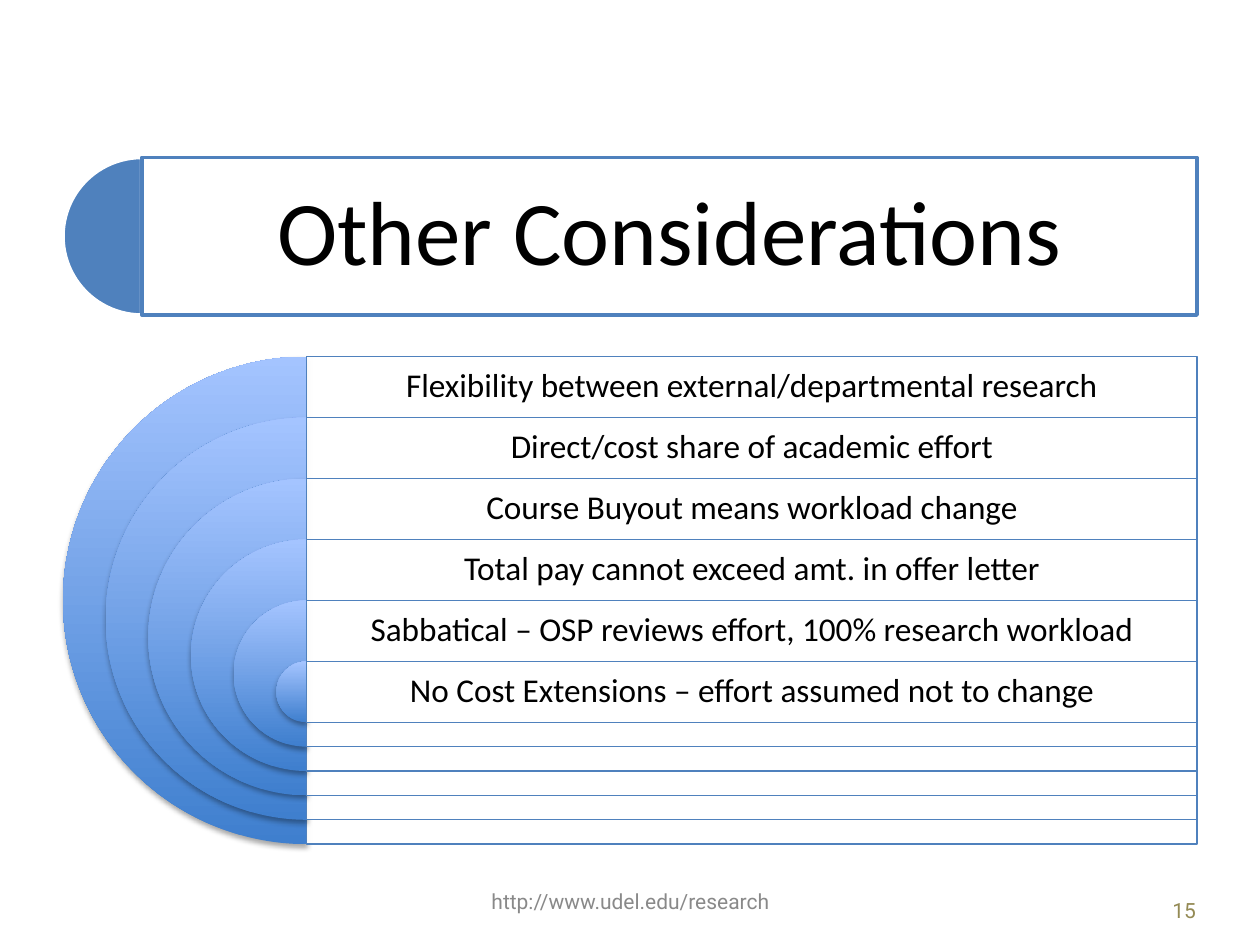
from dataclasses import dataclass

from lxml import etree
from pptx import Presentation
from pptx.dml.color import RGBColor
from pptx.enum.shapes import MSO_SHAPE
from pptx.enum.text import MSO_ANCHOR, PP_ALIGN
from pptx.oxml.ns import qn
from pptx.util import Inches, Pt

PIE, RECT = MSO_SHAPE.PIE, MSO_SHAPE.RECTANGLE
MIDDLE = MSO_ANCHOR.MIDDLE
CENTER, RIGHT = PP_ALIGN.CENTER, PP_ALIGN.RIGHT


@dataclass(frozen=True)
class Theme:
    accent: str = "4F81BD"
    grad_dark: str = "3F7FCE"
    grad_light: str = "A4C4FF"
    white: str = "FFFFFF"
    text: str = "000000"
    footer: str = "898989"
    number: str = "948A54"
    body_font: str = "Calibri"
    footer_font: str = "Roboto"
    title_size: int = 52
    row_size: int = 19
    footer_size: int = 12


THEME = Theme()
TITLE = "Other Considerations"
ROWS = [
    "Flexibility between external/departmental research",
    "Direct/cost share of academic effort",
    "Course Buyout means workload change",
    "Total pay cannot exceed amt. in offer letter",
    "Sabbatical – OSP reviews effort, 100% research workload",
    "No Cost Extensions – effort assumed not to change",
]


def rgb(value):
    return RGBColor.from_string(value)


def write(sp, text, size, color, font, align=CENTER, inset=None, spacing=None):
    tf = sp.text_frame
    tf.word_wrap = True
    tf.vertical_anchor = MIDDLE
    if inset is not None:
        tf.margin_left = tf.margin_right = Inches(inset)
        tf.margin_top = tf.margin_bottom = Inches(inset)
    p = tf.paragraphs[0]
    p.alignment = align
    if spacing:
        p.line_spacing = spacing
    r = p.add_run()
    r.text = text
    r.font.size = Pt(size)
    r.font.name = font
    r.font.color.rgb = rgb(color)


def add_text(s, box, *args, **kwargs):
    sp = s.shapes.add_textbox(*map(Inches, box))
    write(sp, *args, **kwargs)


def style_panel(sp, line_width):
    """Nearly opaque white fill with an accent outline."""
    sp.fill.solid()
    sp.fill.fore_color.rgb = rgb(THEME.white)
    color = sp.fill._xPr.find(qn("a:solidFill"))[0]
    etree.SubElement(color, qn("a:alpha"), val="90000")
    sp.line.color.rgb = rgb(THEME.accent)
    sp.line.width = Pt(line_width)


def add_half_disc(s, left, top, size):
    sp = s.shapes.add_shape(PIE, *map(Inches, (left, top, size, size)))
    sp.adjustments[0] = 54
    sp.adjustments[1] = 162
    sp.shadow.inherit = False
    return sp


def add_soft_shadow(sp):
    effects = sp._element.spPr.find(qn("a:effectLst"))
    shadow = etree.SubElement(
        effects, qn("a:outerShdw"), blurRad=str(Pt(3.1)), dist=str(Pt(1.8)),
        dir="5400000", rotWithShape="0")
    color = etree.SubElement(shadow, qn("a:srgbClr"), val=THEME.text)
    etree.SubElement(color, qn("a:alpha"), val="35000")


def add_title(s, left, top, width, height):
    disc = add_half_disc(s, left, top, height)
    disc.fill.solid()
    disc.fill.fore_color.rgb = rgb(THEME.accent)
    disc.line.color.rgb = rgb(THEME.white)
    disc.line.width = Pt(2)

    title = s.shapes.title
    title.left, title.top = Inches(left + height / 2), Inches(top)
    title.width, title.height = Inches(width - height / 2), Inches(height)
    style_panel(title, 2)
    write(title, TITLE, THEME.title_size, THEME.text, THEME.body_font,
          inset=0.22, spacing=0.9)
    title._element.addprevious(disc._element)


def add_target_list(s, left, top, width, height):
    """Nested half discs, each with a panel whose top strip holds one row."""
    center = left + height / 2
    panel_width = width - height / 2
    row = height / 8
    shrink = (height - row) / (len(ROWS) - 1)
    for i, text in enumerate(ROWS):
        y, size = top + i * row, height - i * shrink
        disc = add_half_disc(s, center - size / 2, y, size)
        disc.fill.gradient()
        disc.fill.gradient_angle = 90
        for stop, color in zip(disc.fill.gradient_stops,
                               (THEME.grad_dark, THEME.grad_light)):
            stop.color.rgb = rgb(color)
        disc.line.fill.background()
        add_soft_shadow(disc)

        panel = s.shapes.add_shape(
            RECT, *map(Inches, (center, y, panel_width, size)))
        panel.shadow.inherit = False
        style_panel(panel, 0.75)
        add_text(s, (center, y, panel_width, row), text, THEME.row_size,
                 THEME.text, THEME.body_font, inset=0.08, spacing=0.9)


def add_footer(s, address_box, number_box):
    add_text(s, address_box, "http://www.udel.edu/research",
             THEME.footer_size, THEME.footer, THEME.footer_font)
    add_text(s, number_box, "15", THEME.footer_size, THEME.number,
             THEME.footer_font, align=RIGHT)


def main():
    prs = Presentation()
    prs.slide_width, prs.slide_height = Inches(10), Inches(7.5)
    s = prs.slides.add_slide(prs.slide_layouts[5])
    add_title(s, 0.5, 1.25, 9, 1.25)
    add_target_list(s, 0.5, 2.83, 9, 3.87)
    add_footer(s, (3.42, 6.95, 3.17, 0.4), (8.67, 7.02, 0.92, 0.4))
    prs.save("out.pptx")


if __name__ == "__main__":
    main()
